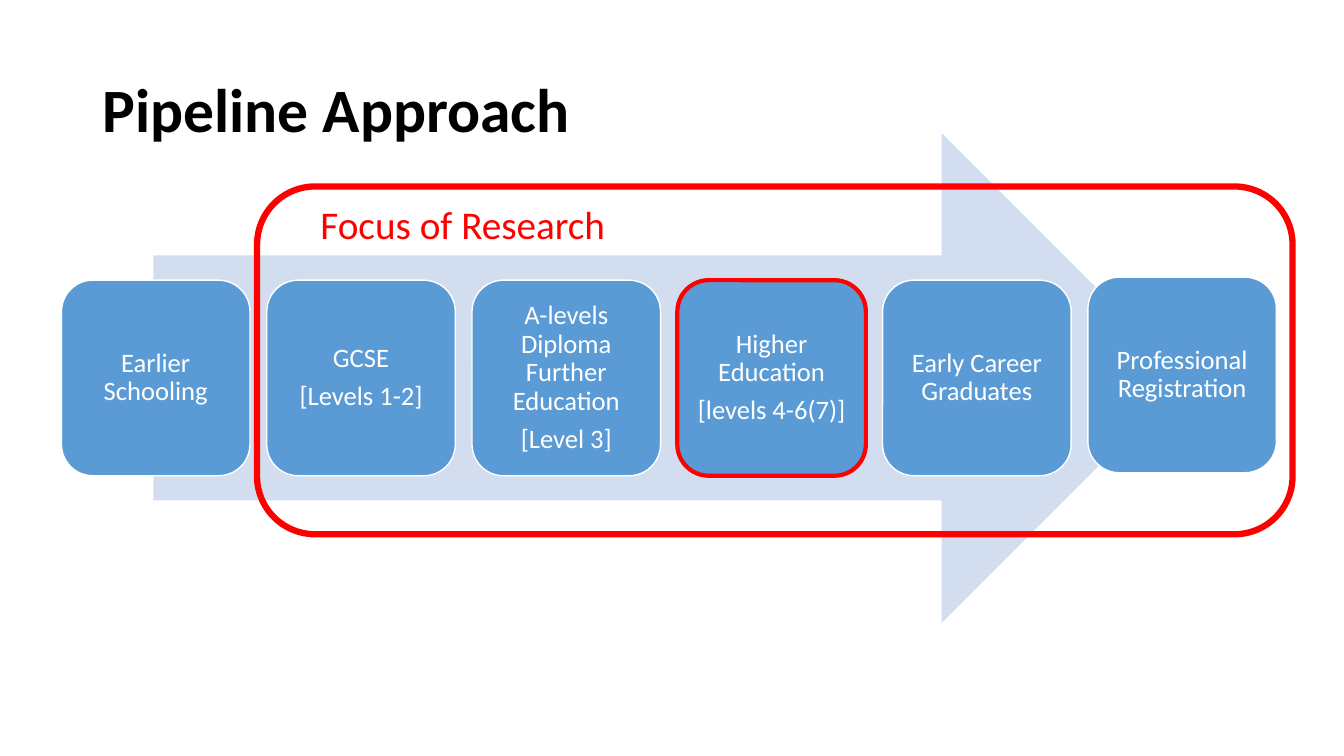
"""Build the Pipeline Approach slide: six education stages on a wide arrow."""
from pptx import Presentation
from pptx.dml.color import RGBColor
from pptx.enum.shapes import MSO_SHAPE
from pptx.enum.text import MSO_ANCHOR, MSO_AUTO_SIZE, PP_ALIGN
from pptx.util import Inches, Pt

COLORS = {
    "black": "000000",
    "white": "FFFFFF",
    "arrow": "D2DEEF",
    "stage": "5B9BD5",
    "focus": "FF0000",
}
FIRST_LEFT, LAST_LEFT, ROW_TOP = 0.61, 10.79, 2.78
STAGE_WIDTH, STAGE_HEIGHT = 1.87, 1.94
STAGES = [
    (["Earlier Schooling"], "white", 1, 0),
    (["GCSE", "[Levels 1-2]"], "white", 1, 0),
    (["A-levels\nDiploma\nFurther Education", "[Level 3]"], "white", 1, 0),
    (["Higher Education", "[levels 4-6(7)]"], "focus", 3, 0),
    (["Early Career Graduates"], "white", 1, 0),
    (["Professional Registration"], "white", 1, -0.03),
]
COLUMN_STEP = (LAST_LEFT - FIRST_LEFT) / (len(STAGES) - 1)


def add_panel(kind, box, fill=None, line=None, width=1):
    """Add a flat preset shape with an optional fill and outline."""
    shape = slide.shapes.add_shape(kind, *map(Inches, box))
    shape.shadow.inherit = False
    if fill:
        shape.fill.solid()
        shape.fill.fore_color.rgb = RGBColor.from_string(COLORS[fill])
    else:
        shape.fill.background()
    if line:
        shape.line.color.rgb = RGBColor.from_string(COLORS[line])
        shape.line.width = Pt(width)
    else:
        shape.line.fill.background()
    return shape


def format_font(paragraph, size, color, bold=False):
    """Format every run of a paragraph."""
    for run in paragraph.runs:
        run.font.name = "Calibri"
        run.font.size = Pt(size)
        run.font.bold = bold
        run.font.color.rgb = RGBColor.from_string(COLORS[color])


presentation = Presentation()
presentation.slide_width = Inches(13.33)
presentation.slide_height = Inches(7.5)
slide = presentation.slides.add_slide(presentation.slide_layouts[5])

title = slide.shapes.title
title.left, title.top, title.width, title.height = map(Inches, (0.92, 0.39, 11.5, 1.45))
title.text_frame.text = "Pipeline Approach"
title.text_frame.vertical_anchor = MSO_ANCHOR.MIDDLE
title.text_frame.auto_size = MSO_AUTO_SIZE.NONE
heading = title.text_frame.paragraphs[0]
heading.alignment = PP_ALIGN.LEFT
heading.line_spacing = 0.9
format_font(heading, 44, "black", bold=True)

add_panel(MSO_SHAPE.RIGHT_ARROW, (1.52, 1.32, 10.25, 4.86), fill="arrow")

for column, (lines, outline, width, shift) in enumerate(STAGES):
    box = (FIRST_LEFT + column * COLUMN_STEP, ROW_TOP + shift, STAGE_WIDTH, STAGE_HEIGHT)
    stage = add_panel(MSO_SHAPE.ROUNDED_RECTANGLE, box, "stage", outline, width)
    frame = stage.text_frame
    frame.word_wrap = True
    frame.vertical_anchor = MSO_ANCHOR.MIDDLE
    frame.margin_left = frame.margin_right = Inches(0.08)
    frame.margin_top = frame.margin_bottom = Inches(0.08)
    for index, line in enumerate(lines):
        paragraph = frame.add_paragraph() if index else frame.paragraphs[0]
        paragraph.text = line
        paragraph.alignment = PP_ALIGN.CENTER
        paragraph.line_spacing = 0.9
        if index:
            paragraph.space_before = Pt(6.65)
        format_font(paragraph, 19, "white")

add_panel(MSO_SHAPE.ROUNDED_RECTANGLE, (2.55, 1.85, 10.27, 3.45), line="focus", width=4.5)

label = slide.shapes.add_textbox(*map(Inches, (3.08, 1.94, 3.66, 0.57)))
label.text_frame.word_wrap = True
label.text_frame.auto_size = MSO_AUTO_SIZE.SHAPE_TO_FIT_TEXT
label.text_frame.text = "Focus of Research"
format_font(label.text_frame.paragraphs[0], 28, "focus")

presentation.save("out.pptx")
